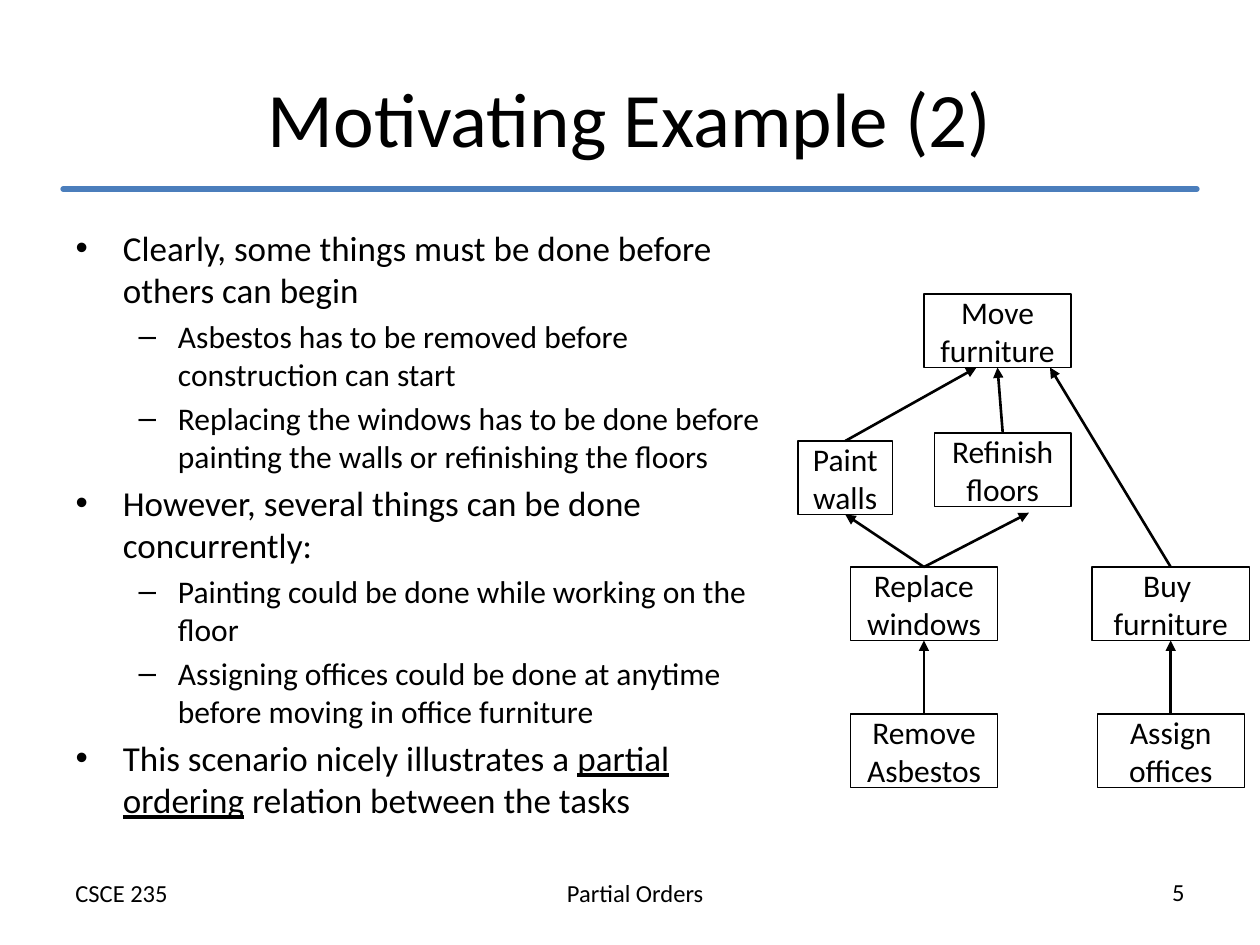
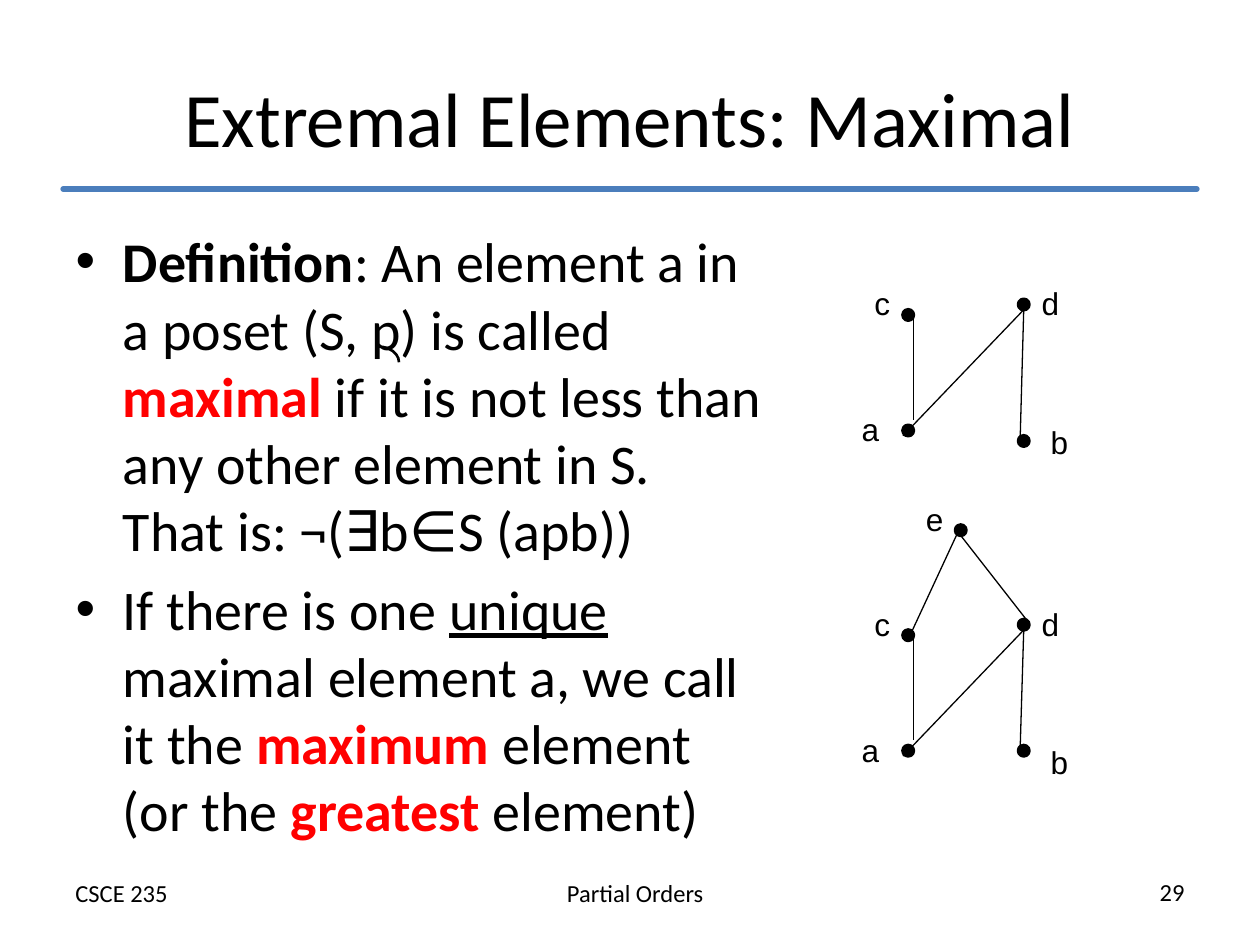
"""Build two slides on partial orders: a task diagram and maximal elements."""
import pptx
import pptx.util
import pptx.dml.color
import pptx.enum.shapes
import pptx.enum.text
import pptx.oxml.ns
import pptx.oxml.xmlchemy

Pt = pptx.util.Pt
Color = pptx.dml.color.RGBColor
Kind = pptx.enum.shapes.MSO_SHAPE
Align = pptx.enum.text.PP_ALIGN
Anchor = pptx.enum.text.MSO_ANCHOR
Fit = pptx.enum.text.MSO_AUTO_SIZE
qn = pptx.oxml.ns.qn
make = pptx.oxml.xmlchemy.OxmlElement

BLACK = Color(0x00, 0x00, 0x00)
RED = Color(0xFF, 0x00, 0x00)
BLUE = Color(0x4B, 0x7E, 0xBC)
FONT = "Calibri"

COURSE, TOPIC = "CSCE 235", "Partial Orders"

TASKS = {
    "title": "Motivating Example (2)",
    "page": "5",
    "sizes": (20, 18),
    "body": [
        (0, [("Clearly, some things must be done before others can begin", "")]),
        (1, [("Asbestos has to be removed before construction can start", "")]),
        (1, [("Replacing the windows has to be done before painting the walls "
              "or refinishing the floors", "")]),
        (0, [("However, several things can be done concurrently:", "")]),
        (1, [("Painting could be done while working on the floor", "")]),
        (1, [("Assigning offices could be done at anytime before moving in "
              "office furniture", "")]),
        (0, [("This scenario nicely illustrates a ", ""),
             ("partial ordering", "under"),
             (" relation between the tasks", "")]),
    ],
}

MAXIMAL = {
    "title": "Extremal Elements: Maximal",
    "page": "29",
    "sizes": (32,),
    "body": [
        (0, [("Definition", "bold"),
             (": An element a in a poset (S, p) is called ", ""),
             ("maximal", "red"),
             (" if it is not less than any other element in S. "
              "That is: ¬(∃b∈S (apb))", "")]),
        (0, [("If there is one ", ""), ("unique", "under"),
             (" maximal element a, we call it the ", ""),
             ("maximum", "red"), (" element (or the ", ""),
             ("greatest", "red"), (" element)", "")]),
    ],
}

BOX_H = 42
BOXES = {
    "remove": ("Remove Asbestos", 486, 408, 84),
    "replace": ("Replace windows", 486, 324, 84),
    "paint": ("Paint walls", 456, 252, 54),
    "finish": ("Refinish floors", 534, 247.5, 78),
    "move": ("Move furniture", 528, 168, 84),
    "buy": ("Buy \nfurniture", 624, 324, 90),
    "assign": ("Assign offices", 627, 408, 84),
}
ARROWS = [
    ("remove", "replace"), ("assign", "buy"), ("finish", "move"),
    ("replace", (588, 293)), ("replace", "paint"),
    ("paint", (558, 210)), ("buy", (600, 210)),
]

DOT = 6
SMALL = {"a": (516, 243), "b": (582, 249), "c": (516, 177), "d": (582, 171)}
LARGE = {"a": (516, 426), "b": (582, 426), "c": (516, 360), "d": (582, 354),
         "e": (546, 300)}
LABELS = {"a": (485.3, 231), "b": (593.3, 238.3), "c": (492.5, 159),
          "d": (588.2, 159), "e": (522, 99)}
DROP = 183
EDGES = [
    ("a", (0, 6), "d", (3, 6)),
    ("b", (1, 1), "d", (3, 6)),
    ("a", (6, -3), "c", (6, 4)),
    ("c", (5, 1), "e", (1, 5)),
    ("d", (6, 2), "e", (3, 6)),
]


def place(shape, left, top, width, height):
    shape.left, shape.top = Pt(left), Pt(top)
    shape.width, shape.height = Pt(width), Pt(height)


def style(para, size, align=None, font=FONT):
    para.font.name, para.font.size = font, Pt(size)
    para.font.color.rgb = BLACK
    if align is not None:
        para.alignment = align


def label(slide, text, left, top, width, size, align, font=FONT, wrap=True):
    box = slide.shapes.add_textbox(Pt(left), Pt(top), Pt(width), Pt(size * 1.2 + 7.2))
    frame = box.text_frame
    frame.word_wrap = wrap
    frame.auto_size = Fit.SHAPE_TO_FIT_TEXT
    frame.text = text
    style(frame.paragraphs[0], size, align, font)


def draw(slide, kind, left, top, width, height, weight):
    shape = slide.shapes.add_shape(kind, Pt(left), Pt(top), Pt(width), Pt(height))
    shape.shadow.inherit = False
    shape.fill.background()
    shape.line.color.rgb = BLACK
    shape.line.width = Pt(weight)
    return shape


def link(slide, start, end, weight, color=BLACK):
    line = slide.shapes.add_connector(
        pptx.enum.shapes.MSO_CONNECTOR.STRAIGHT, *map(Pt, (*start, *end)))
    line.line.color.rgb = color
    line.line.width = Pt(weight)
    props = line.element.spPr
    props.append(make("a:effectLst"))
    return line, props.find(qn("a:ln"))


def fill(frame, body, sizes):
    for num, (level, runs) in enumerate(body):
        para = frame.paragraphs[0] if num == 0 else frame.add_paragraph()
        para.level = level
        style(para, sizes[level])
        for text, look in runs:
            run = para.add_run()
            run.text = text
            if look == "under":
                run.font.underline = True
            elif look:
                run.font.bold = True
                if look == "red":
                    run.font.color.rgb = RED


def start(deck, data):
    slide = deck.slides.add_slide(deck.slide_layouts[1])
    title, body = slide.placeholders
    label(slide, TOPIC, 258, 498, 210, 14, Align.CENTER)
    label(slide, COURSE, 36, 498, 210, 14, Align.LEFT)
    label(slide, data["page"], 474, 497.5, 210, 14, Align.RIGHT)
    rule, pen = link(slide, (36, 108), (684, 108), 3, BLUE)
    pen.set("cap", "rnd")
    place(title, 36, 21.6, 648, 90)
    title.text_frame.text = data["title"]
    title.text_frame.vertical_anchor = Anchor.MIDDLE
    style(title.text_frame.paragraphs[0], 44, Align.CENTER)
    place(body, 36, 126, 408, 356.4)
    body.text_frame.auto_size = Fit.NONE
    fill(body.text_frame, data["body"], data["sizes"])
    return slide


def flow(slide):
    boxes = {}
    for name, (text, left, top, width) in BOXES.items():
        box = boxes[name] = draw(slide, Kind.RECTANGLE, left, top, width, BOX_H, 0.75)
        box.text_frame.text = text
        box.text_frame.vertical_anchor = Anchor.MIDDLE
        for para in box.text_frame.paragraphs:
            style(para, 18, Align.CENTER)
    for tail, goal in ARROWS:
        point = (0, 0) if goal in boxes else goal
        arrow, pen = link(slide, (0, 0), point, 1.5)
        arrow.begin_connect(boxes[tail], 0)
        if goal in boxes:
            arrow.end_connect(boxes[goal], 2)
        head = make("a:tailEnd")
        head.set("type", "triangle")
        pen.append(head)


def graph(slide, nodes, drop):
    for name, (left, top) in nodes.items():
        dot = draw(slide, Kind.OVAL, left, top, DOT, DOT, 2)
        dot.fill.solid()
        dot.fill.fore_color.rgb = BLACK
        x, y = LABELS[name]
        label(slide, name, x, y + drop, 24.4, 18, Align.LEFT, "Arial", False)
    for one, near, two, far in EDGES:
        if one in nodes and two in nodes:
            ends = [[p + q for p, q in zip(nodes[name], shift)]
                    for name, shift in ((one, near), (two, far))]
            link(slide, *ends, 0.75)


def main():
    deck = pptx.Presentation()
    deck.slide_width, deck.slide_height = Pt(720), Pt(540)
    flow(start(deck, TASKS))
    slide = start(deck, MAXIMAL)
    draw(slide, Kind.ARC, 204, 198, 24, 18, 1.5)
    graph(slide, SMALL, 0)
    graph(slide, LARGE, DROP)
    deck.save("out.pptx")


if __name__ == "__main__":
    main()
